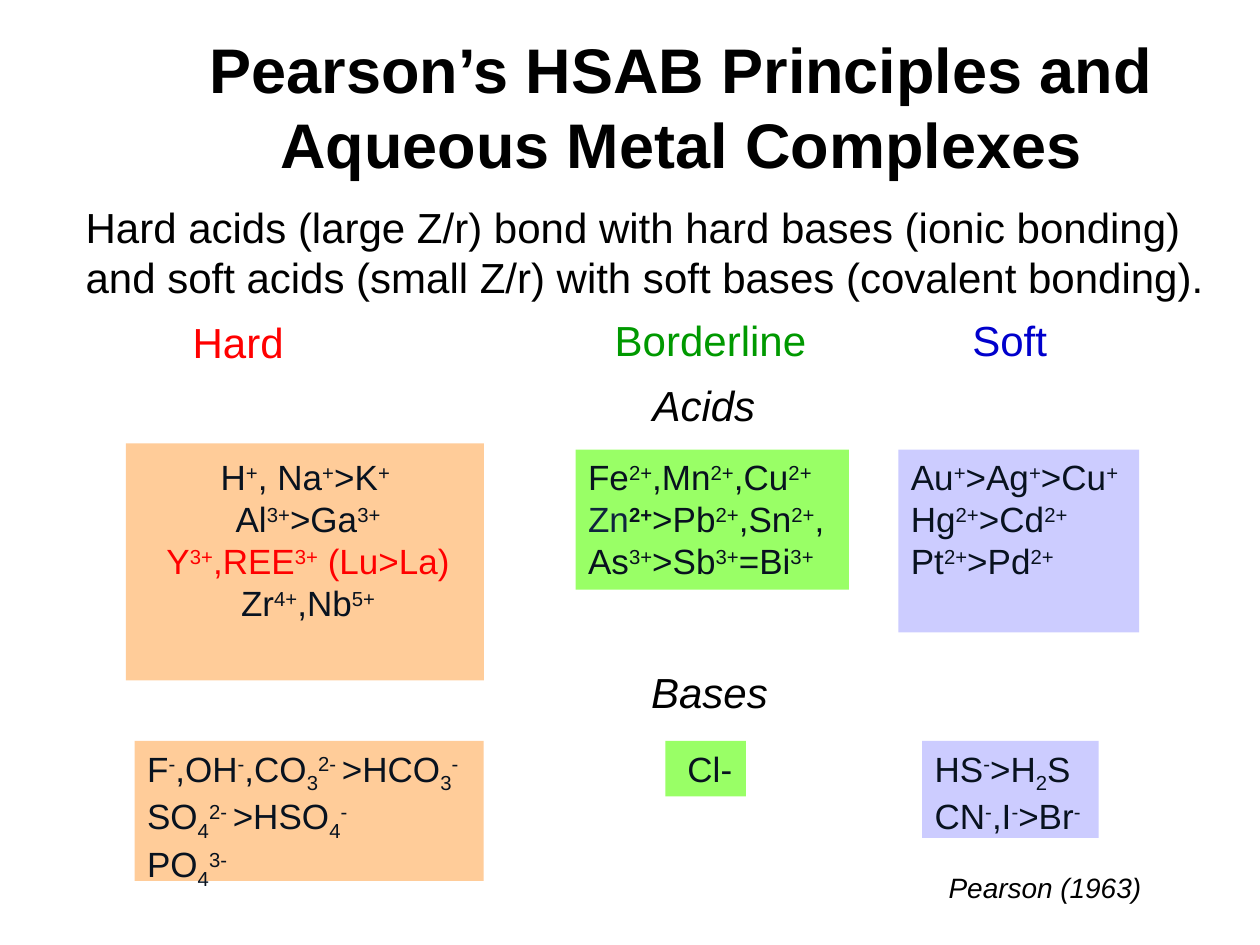
import pptx
import pptx.dml.color
import pptx.enum.shapes
import pptx.enum.text
import pptx.util
from dataclasses import dataclass

Pt = pptx.util.Pt
ALIGN = pptx.enum.text.PP_ALIGN


@dataclass(frozen=True)
class Theme:
    font: str = "Arial"
    black: str = "000000"
    ink: str = "08121F"
    slate: str = "0F243E"
    red: str = "FF0000"
    green: str = "009900"
    blue: str = "0000CC"
    hard_fill: str = "FFCC99"
    borderline_fill: str = "99FF66"
    soft_fill: str = "CCCCFF"
    title: float = 36
    body: float = 24
    formula: float = 20
    credit: float = 16


THEME = Theme()

# A segment's first character may be one of these marks.
MARKS = {
    "^": {"baseline": 30000},
    "_": {"baseline": -25000},
    "*": {"baseline": 30000, "bold": True},
    "~": {"color": THEME.slate},
    "!": {"color": THEME.red},
    "%": {"color": THEME.red, "baseline": 30000},
}

ACIDS_TOP, BASES_TOP = 257, 423.4

# left, top, width, height, fill, wrap, alignment, lines
FORMULA_BOXES = [
    (329, ACIDS_TOP, 156.2, 79.9, THEME.borderline_fill, False, ALIGN.LEFT,
     ["Fe|^2+|,Mn|^2+|,Cu|^2+", "~Zn|*2+|>Pb|^2+|,Sn|^2+|,", "As|^3+|>Sb|^3+|=Bi|^3+"]),
    (75.6, ACIDS_TOP, 200.9, 120.2, THEME.hard_fill, True, ALIGN.CENTER,
     ["H|^+|, Na|^+|>K|^+ ", "Al|^3+|>Ga|^3+",
      "!Y|%3+|!,REE|%3+|! (Lu>La)", "Zr|^4+|,Nb|^5+"]),
    (513.4, ACIDS_TOP, 137.5, 104.4, THEME.soft_fill, True, ALIGN.LEFT,
     ["Au|^+|>Ag|^+|>Cu|^+", "Hg|^2+|>Cd|^2+", "Pt|^2+|>Pd|^2+"]),
    (77, BASES_TOP, 199.4, 79.9, THEME.hard_fill, False, ALIGN.LEFT,
     ["F|^-|,OH|^-|,CO|_3|^2- |>HCO|_3|^-", "SO|_4|^2- |>HSO|_4|^-", "PO|_4|^3-"]),
    (380.2, BASES_TOP, 46.1, 31.7, THEME.borderline_fill, False, ALIGN.LEFT, [" Cl-"]),
    (527, BASES_TOP, 100.8, 55.4, THEME.soft_fill, False, ALIGN.LEFT,
     ["HS|^-|>H|_2|S", "CN|^-|,I|^-|>Br|^-"]),
]

# text, left, top, width, colour, italic
HEADINGS = [
    ("Hard", 103, 177.1, 67, THEME.red, False),
    ("Borderline", 344.2, 176.4, 125.3, THEME.green, False),
    ("Soft", 548.6, 176.4, 57.6, THEME.blue, False),
    ("Acids", 365.8, 213.1, 74.2, THEME.black, True),
    ("Bases", 365, 377.3, 82.1, THEME.black, True),
]


def add_run(paragraph, text, size, color, baseline=0, **font_format):
    run = paragraph.add_run()
    run.text = text
    values = {"name": THEME.font, "size": Pt(size), **font_format}
    for name, value in values.items():
        setattr(run.font, name, value)
    run.font.color.rgb = pptx.dml.color.RGBColor.from_string(color)
    if baseline:
        run.font._element.set("baseline", str(baseline))


def set_frame(frame, wrap):
    values = {
        "word_wrap": wrap,
        "auto_size": pptx.enum.text.MSO_AUTO_SIZE.SHAPE_TO_FIT_TEXT,
        "vertical_anchor": pptx.enum.text.MSO_ANCHOR.TOP,
    }
    for name, value in values.items():
        setattr(frame, name, value)


def add_text(slide, text, box, size, color=THEME.black, wrap=True,
             alignment=ALIGN.LEFT, **font_format):
    frame = slide.shapes.add_textbox(*map(Pt, box)).text_frame
    set_frame(frame, wrap)
    paragraph = frame.paragraphs[0]
    paragraph.alignment = alignment
    add_run(paragraph, text, size, color, **font_format)


def add_panel(slide, box, fill):
    rectangle = pptx.enum.shapes.MSO_SHAPE.RECTANGLE
    shape = slide.shapes.add_shape(rectangle, *map(Pt, box))
    shape.shadow.inherit = False
    shape.fill.solid()
    shape.fill.fore_color.rgb = pptx.dml.color.RGBColor.from_string(fill)
    shape.line.fill.background()
    return shape


def add_formula_box(slide, box, fill, wrap, alignment, lines):
    """Write each line as segments parted by bars, styled by their marks."""
    frame = add_panel(slide, box, fill).text_frame
    set_frame(frame, wrap)
    for index, line in enumerate(lines):
        paragraph = frame.add_paragraph() if index else frame.paragraphs[0]
        paragraph.alignment = alignment
        for segment in line.split("|"):
            style = MARKS.get(segment[0], {})
            text = segment[1:] if style else segment
            add_run(paragraph, text, THEME.formula, **{"color": THEME.ink, **style})


def main():
    presentation = pptx.Presentation()
    presentation.slide_width, presentation.slide_height = Pt(720), Pt(540)
    slide = presentation.slides.add_slide(presentation.slide_layouts[6])

    add_text(slide, "Pearson’s HSAB Principles and Aqueous Metal Complexes",
             (103, 13.7, 572.4, 94.3), THEME.title, alignment=ALIGN.CENTER, bold=True)
    add_text(slide, "Hard acids (large Z/r) bond with hard bases (ionic bonding) "
             "and soft acids (small Z/r) with soft bases (covalent bonding).",
             (41.8, 111.6, 682.6, 65.5), THEME.body)
    for text, left, top, width, color, italic in HEADINGS:
        add_text(slide, text, (left, top, width, 36), THEME.body, color,
                 wrap=False, italic=italic)

    add_panel(slide, (72, 253.4, 204.5, 135.4), THEME.hard_fill)
    for left, top, width, height, *content in FORMULA_BOXES:
        add_formula_box(slide, (left, top, width, height), *content)
    add_text(slide, "Pearson (1963)", (535, 493.9, 140.4, 26.6), THEME.credit, italic=True)

    presentation.save("out.pptx")


if __name__ == "__main__":
    main()
